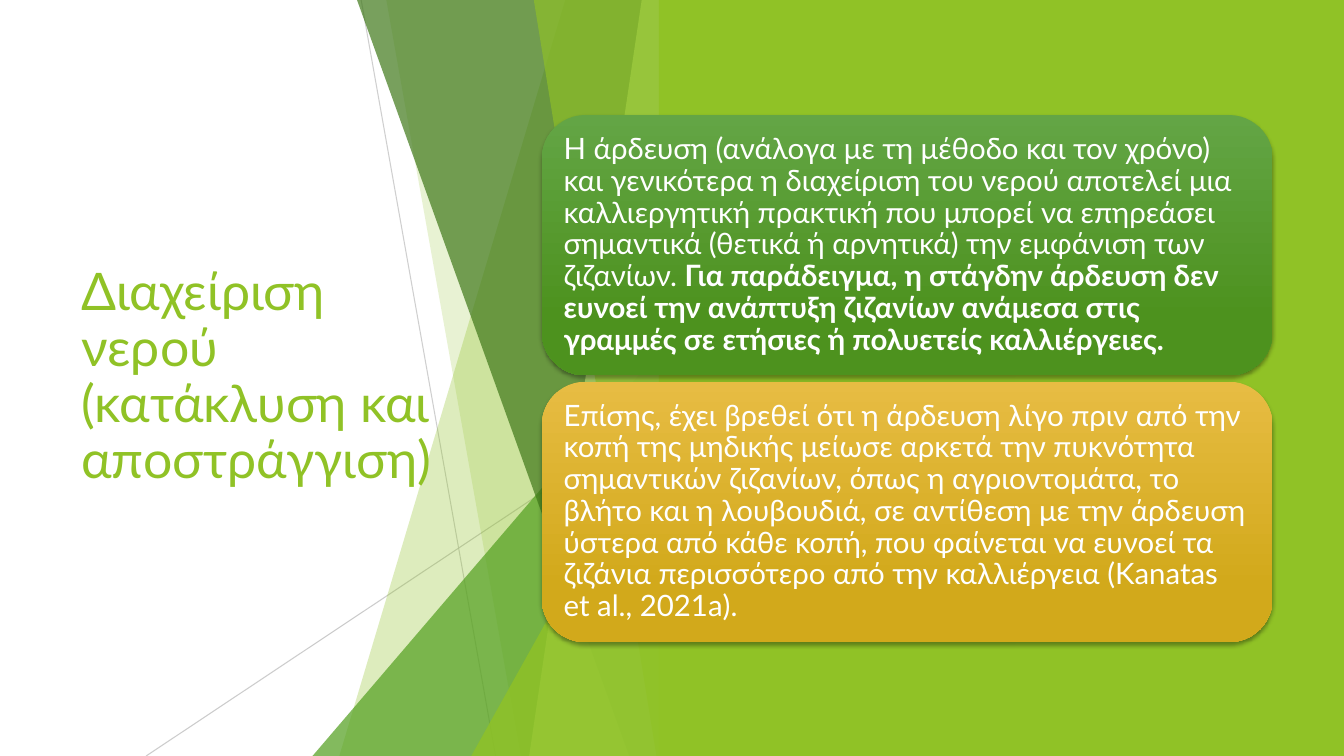
from dataclasses import dataclass

import lxml.etree
import pptx
import pptx.dml.color
import pptx.enum.shapes
import pptx.enum.text
import pptx.oxml.ns
import pptx.util

SLIDE_WIDTH = pptx.util.Inches(13.333)
SLIDE_HEIGHT = pptx.util.Inches(7.5)
COLUMNS, ROWS = 160, 90
CENTRE = COLUMNS / 2
SHAPE = pptx.enum.shapes.MSO_SHAPE


@dataclass(frozen=True)
class Theme:
    font: str = "Lato"
    title_size: float = 37
    body_size: float = 21
    lime: str = "90C226"
    pale_lime: str = "C0E474"
    green: str = "54A021"
    dark_green: str = "3F7819"
    line: str = "BFBFBF"
    white: str = "FFFFFF"
    shadow: str = "000000"
    green_card: tuple = ("63A545", "4D921E")
    gold_card: tuple = ("E7BC43", "D2A91B")


THEME = Theme()

TITLE = "Διαχείριση νερού (κατάκλυση και αποστράγγιση)"
CARDS = (
    (THEME.green_card, (
        ("Η άρδευση (ανάλογα με τη μέθοδο και τον χρόνο) και γενικότερα η "
         "διαχείριση του νερού αποτελεί μια καλλιεργητική πρακτική που μπορεί "
         "να επηρεάσει σημαντικά (θετικά ή αρνητικά) την εμφάνιση των "
         "ζιζανίων. ", False),
        ("Για παράδειγμα, η στάγδην άρδευση δεν ευνοεί την ανάπτυξη ζιζανίων "
         "ανάμεσα στις γραμμές σε ετήσιες ή πολυετείς καλλιέργειες.", True),
    )),
    (THEME.gold_card, (
        ("Επίσης, έχει βρεθεί ότι η άρδευση λίγο πριν από την κοπή της μηδικής "
         "μείωσε αρκετά την πυκνότητα σημαντικών ζιζανίων, όπως η "
         "αγριοντομάτα, το βλήτο και η λουβουδιά, σε αντίθεση με την άρδευση "
         "ύστερα από κάθε κοπή, που φαίνεται να ευνοεί τα ζιζάνια περισσότερο "
         "από την καλλιέργεια (Kanatas et al., 2021a).", False),
    )),
)


def column(count):
    return round(SLIDE_WIDTH * count / COLUMNS)


def row(count):
    return round(SLIDE_HEIGHT * count / ROWS)


def area(left, top, width, height):
    return column(left), row(top), column(width), row(height)


def rgb(code):
    return pptx.dml.color.RGBColor.from_string(code)


def add_element(parent, tag, **attributes):
    element = lxml.etree.SubElement(parent, pptx.oxml.ns.qn(tag))
    for name, value in attributes.items():
        element.set(name, str(value))
    return element


def set_opacity(fill, percent):
    colour = fill.fore_color._xFill.find(pptx.oxml.ns.qn("a:srgbClr"))
    add_element(colour, "a:alpha", val=percent * 1000)


def paint(shape, colour, opacity=100):
    shape.shadow.inherit = False
    shape.line.fill.background()
    shape.fill.solid()
    shape.fill.fore_color.rgb = rgb(colour)
    if opacity < 100:
        set_opacity(shape.fill, opacity)


def add_hairline(page, start, end, opacity):
    line = page.shapes.add_connector(
        pptx.enum.shapes.MSO_CONNECTOR.STRAIGHT,
        column(start[0]), row(start[1]), column(end[0]), row(end[1]))
    line.line.width = pptx.util.Pt(0.75)
    line.line.color.rgb = rgb(THEME.line)
    set_opacity(line.line.fill, opacity)
    add_element(line._element.spPr, "a:effectLst")


def add_facet(page, top_left, bottom_left, colour, opacity):
    """Full-height facet with a slanted left side, ending at the centre."""
    builder = page.shapes.build_freeform(column(top_left), 0)
    builder.add_line_segments([
        (column(CENTRE), 0), (column(CENTRE), row(ROWS)),
        (column(bottom_left), row(ROWS))])
    paint(builder.convert_to_shape(), colour, opacity)


def add_corner(page, left, top, colour, opacity):
    """Right-angled triangle in the bottom corner against the centre."""
    corner = page.shapes.add_shape(
        SHAPE.ISOSCELES_TRIANGLE,
        *area(left, top, CENTRE - left, ROWS - top))
    corner.adjustments[0] = 1
    paint(corner, colour, opacity)


def add_facets(page):
    add_hairline(page, (43, 0), (59, ROWS), 75)
    add_hairline(page, (CENTRE, 48.35), (17.4, ROWS), 80)
    add_facet(page, 67.3, 40.4, THEME.lime, 30)
    add_facet(page, 46, 62, THEME.lime, 20)
    add_corner(page, 37.2, 40, THEME.green, 72)
    add_facet(page, 42.5, 74.9, THEME.dark_green, 70)
    add_facet(page, 76.4, 63, THEME.pale_lime, 70)
    add_facet(page, 63.55, 78.15, THEME.lime, 65)
    add_corner(page, 56.1, 47.2, THEME.lime, 80)


def write(frame, spans, size, colour):
    frame.word_wrap = True
    frame.vertical_anchor = pptx.enum.text.MSO_ANCHOR.MIDDLE
    para = frame.paragraphs[0]
    para.alignment = pptx.enum.text.PP_ALIGN.LEFT
    para.line_spacing = 0.9
    for text, bold in spans:
        span = para.add_run()
        span.text = text
        span.font.name = THEME.font
        span.font.size = pptx.util.Pt(size)
        span.font.bold = bold
        span.font.color.rgb = rgb(colour)
    return para


def add_title(page):
    box = page.shapes.add_textbox(*area(8.5, 18.1, 46.6, 53.8))
    write(box.text_frame, [(TITLE, False)], THEME.title_size, THEME.lime)


def add_panel(page):
    left = 78.45
    panel = page.shapes.add_shape(
        SHAPE.RECTANGLE, *area(left, 0, COLUMNS - left, ROWS))
    paint(panel, THEME.lime)


def add_drop_shadow(shape):
    shape.shadow.inherit = False
    effects = shape._element.spPr.find(pptx.oxml.ns.qn("a:effectLst"))
    shadow = add_element(
        effects, "a:outerShdw", blurRad=pptx.util.Pt(3),
        dist=pptx.util.Pt(2), dir=90 * 60000, rotWithShape=0)
    colour = add_element(shadow, "a:srgbClr", val=THEME.shadow)
    add_element(colour, "a:alpha", val=35000)


def add_card(page, top, gradient, spans):
    card = page.shapes.add_shape(
        SHAPE.ROUNDED_RECTANGLE, *area(64.5, top, 87, 31))
    card.line.fill.background()
    card.fill.gradient()
    card.fill.gradient_angle = 270
    for stop, colour, position in zip(
            card.fill.gradient_stops, gradient, (0, 0.78)):
        stop.color.rgb = rgb(colour)
        stop.position = position
    add_drop_shadow(card)
    frame = card.text_frame
    frame.margin_left = frame.margin_right = column(1.1)
    frame.margin_top = frame.margin_bottom = row(1.1)
    para = write(frame, spans, THEME.body_size, THEME.white)
    para.space_after = pptx.util.Pt(7)


def main():
    deck = pptx.Presentation()
    deck.slide_width, deck.slide_height = SLIDE_WIDTH, SLIDE_HEIGHT
    page = deck.slides.add_slide(deck.slide_layouts[6])
    page.background.fill.solid()
    page.background.fill.fore_color.rgb = rgb(THEME.white)
    add_title(page)
    add_facets(page)
    add_panel(page)
    for index, (gradient, spans) in enumerate(CARDS):
        add_card(page, 13.7 + 31.75 * index, gradient, spans)
    deck.save("out.pptx")


if __name__ == "__main__":
    main()
